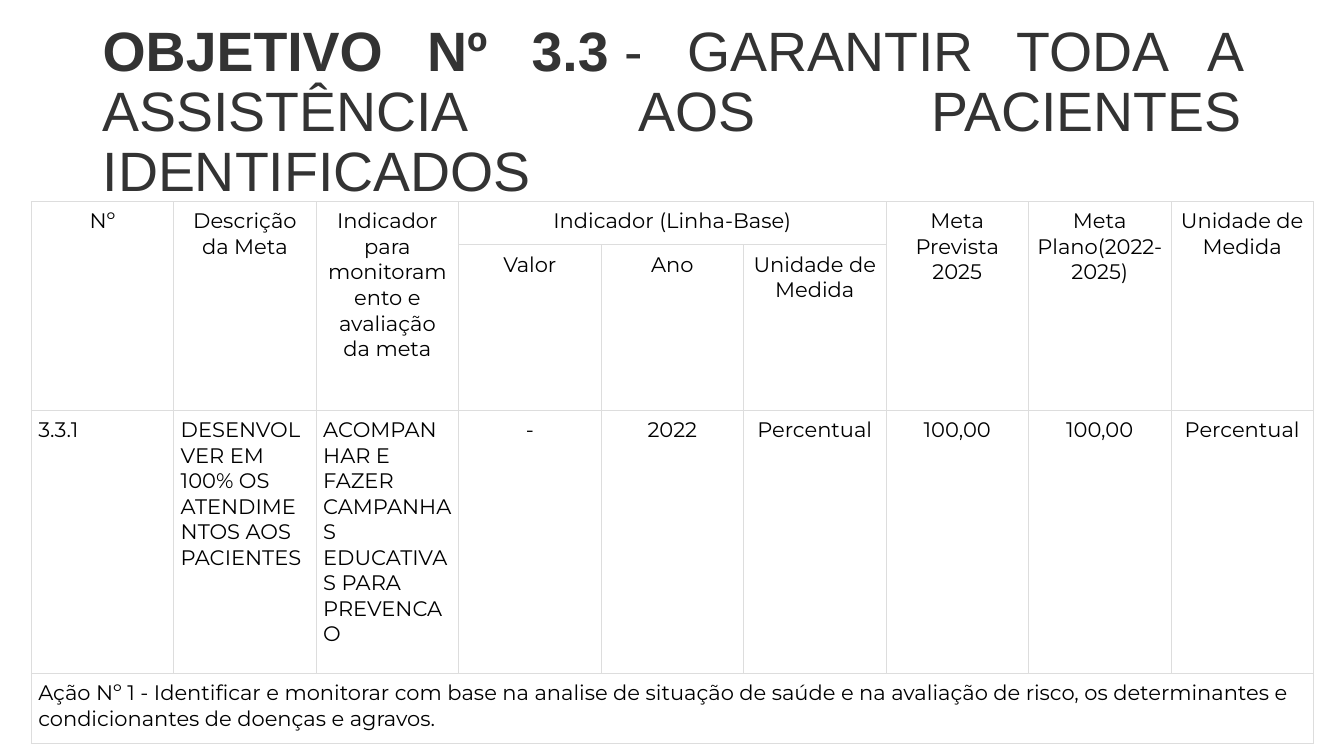
from dataclasses import dataclass

from lxml.etree import SubElement
from pptx import Presentation
from pptx.dml.color import RGBColor
from pptx.enum.text import MSO_ANCHOR, PP_ALIGN
from pptx.oxml.ns import qn
from pptx.util import Inches, Pt


@dataclass(frozen=True)
class Theme:
    title_font: str = "Arial"
    table_font: str = "Montserrat"
    title_size: float = 39.6
    table_size: float = 15
    title_color: str = "333333"
    text_color: str = "000000"
    cell_fill: str = "FFFFFF"
    border_color: str = "DDDDDD"
    border_width: float = 0.75
    cell_margin: float = 0.07


THEME = Theme()

TITLE_RUNS = [
    ("OBJETIVO Nº 3.3", True),
    ("\u00a0- GARANTIR TODA A ASSISTÊNCIA AOS PACIENTES IDENTIFICADOS", False),
]
ROW_HEIGHTS = [0.43, 1.37, 2.61, 0.7]
COLUMN_COUNT = 9
BASELINE_COLUMNS = (3, 5)
HEADER = [
    "Nº", "Descrição da Meta", "Indicador para monitoramento e avaliação da meta",
    "Indicador (Linha-Base)", "", "",
    "Meta Prevista 2025", "Meta Plano(2022-2025)", "Unidade de Medida",
]
SUBHEADER = ["", "", "", "Valor", "Ano", "Unidade de Medida", "", "", ""]
GOAL = [
    "3.3.1", "DESENVOLVER EM 100% OS ATENDIMENTOS AOS PACIENTES",
    "ACOMPANHAR E FAZER CAMPANHAS EDUCATIVAS PARA PREVENCAO",
    "-", "2022", "Percentual", "100,00", "100,00", "Percentual",
]
ACTION = [
    "Ação Nº 1 - Identificar e monitorar com base na analise de situação de saúde "
    "e na avaliação de risco, os determinantes e condicionantes de doenças e agravos."
] + [""] * (COLUMN_COUNT - 1)
ROWS = [HEADER, SUBHEADER, GOAL, ACTION]


def set_font(paragraph, name, size, color):
    paragraph.font.name = name
    paragraph.font.size = Pt(size)
    paragraph.font.color.rgb = RGBColor.from_string(color)


def add_title(slide, left, top, width, height):
    box = slide.shapes.add_textbox(Inches(left), Inches(top), Inches(width), Inches(height))
    frame = box.text_frame
    frame.word_wrap = True
    frame.vertical_anchor = MSO_ANCHOR.MIDDLE
    paragraph = frame.paragraphs[0]
    paragraph.alignment = PP_ALIGN.JUSTIFY
    paragraph.line_spacing = 0.9
    set_font(paragraph, THEME.title_font, THEME.title_size, THEME.title_color)
    for text, bold in TITLE_RUNS:
        run = paragraph.add_run()
        run.text = text
        run.font.bold = bold


def add_borders(cell):
    properties = cell._tc.get_or_add_tcPr()
    for position, side in enumerate(("a:lnL", "a:lnR", "a:lnT", "a:lnB")):
        line = SubElement(properties, qn(side), w=str(Pt(THEME.border_width)))
        fill = SubElement(line, qn("a:solidFill"))
        SubElement(fill, qn("a:srgbClr"), val=THEME.border_color)
        # Borders come before the fill in the cell properties
        properties.insert(position, line)


def style_cell(cell, text, alignment):
    cell.fill.solid()
    cell.fill.fore_color.rgb = RGBColor.from_string(THEME.cell_fill)
    margin = Inches(THEME.cell_margin)
    cell.margin_left = cell.margin_right = cell.margin_top = cell.margin_bottom = margin
    cell.text = text
    paragraph = cell.text_frame.paragraphs[0]
    paragraph.alignment = alignment
    set_font(paragraph, THEME.table_font, THEME.table_size, THEME.text_color)
    add_borders(cell)


def add_goal_table(slide, left, top, width):
    frame = slide.shapes.add_table(
        len(ROWS), COLUMN_COUNT,
        Inches(left), Inches(top), Inches(width), Inches(sum(ROW_HEIGHTS)))
    table = frame.table
    table.first_row = table.horz_banding = False
    for column in table.columns:
        column.width = Inches(width / COLUMN_COUNT)
    for row, height in zip(table.rows, ROW_HEIGHTS):
        row.height = Inches(height)

    # Cell text: headings and values centred, descriptions to the left
    for row_index, texts in enumerate(ROWS):
        for column_index, text in enumerate(texts):
            is_description = row_index == 3 or (row_index == 2 and column_index < 3)
            alignment = PP_ALIGN.LEFT if is_description else PP_ALIGN.CENTER
            style_cell(table.cell(row_index, column_index), text, alignment)

    # Merged headings and the full-width action row
    first, last = BASELINE_COLUMNS
    for column_index in range(COLUMN_COUNT):
        if not first <= column_index <= last:
            table.cell(0, column_index).merge(table.cell(1, column_index))
    table.cell(0, first).merge(table.cell(0, last))
    table.cell(3, 0).merge(table.cell(3, COLUMN_COUNT - 1))


def main():
    presentation = Presentation()
    presentation.slide_width = Inches(13.33)
    presentation.slide_height = Inches(7.5)
    slide = presentation.slides.add_slide(presentation.slide_layouts[6])
    add_title(slide, 0.92, 0.4, 11.5, 1.45)
    add_goal_table(slide, 0.31, 2, 12.72)
    presentation.save("out.pptx")


if __name__ == "__main__":
    main()
